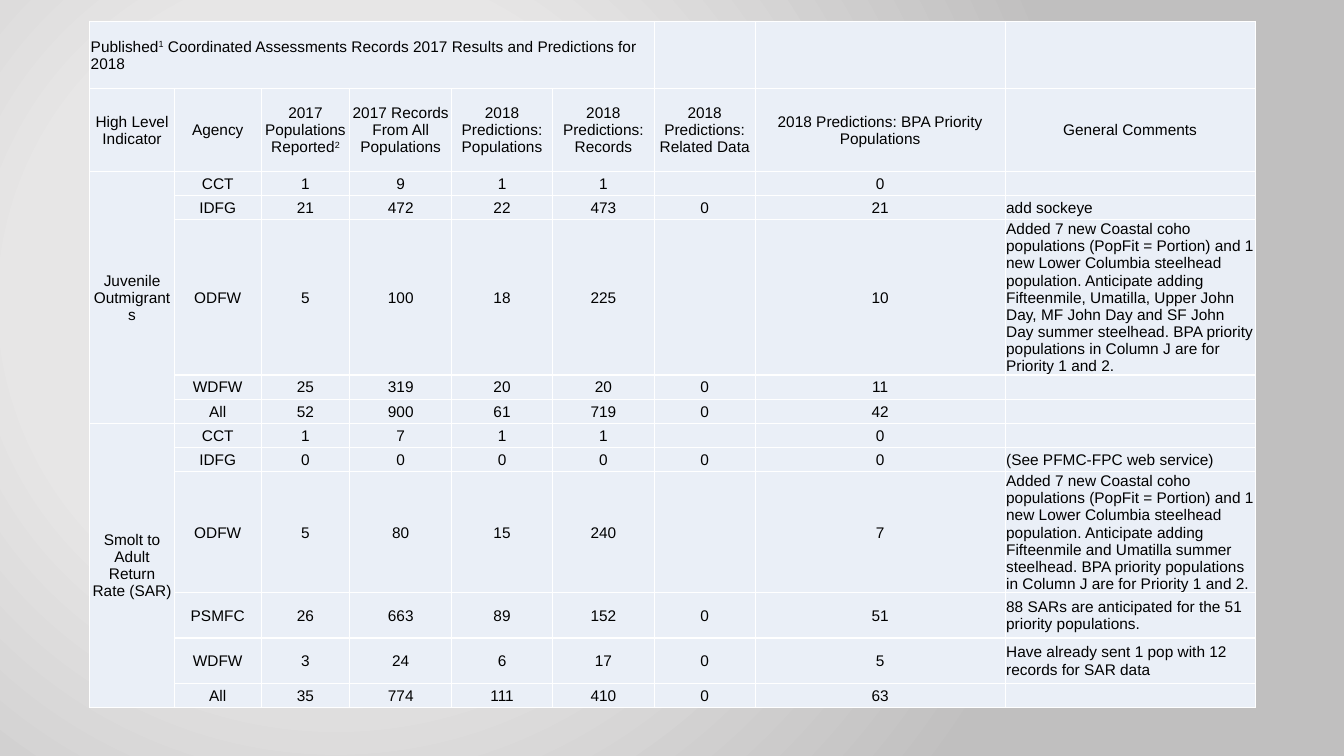
"""Build the slide with the table of 2017 results and 2018 predictions."""
from lxml.etree import SubElement
from pptx import Presentation
from pptx.dml.color import RGBColor
from pptx.enum.text import MSO_ANCHOR, PP_ALIGN
from pptx.oxml import parse_xml
from pptx.oxml.ns import nsdecls, qn
from pptx.util import Inches, Pt

TITLE = "Published^1^ Coordinated Assessments Records 2017 Results and Predictions for 2018"
HEADS = ["High Level Indicator", "Agency", "2017 Populations Reported^2^",
         "2017 Records From All Populations", "2018 Predictions: Populations",
         "2018 Predictions: Records", "2018 Predictions: Related Data",
         "2018 Predictions: BPA Priority Populations", "General Comments"]
COHO = ("Added 7 new Coastal coho populations (PopFit = Portion) and 1 new Lower Columbia "
        "steelhead population. Anticipate adding Fifteenmile{}summer steelhead. "
        "BPA priority populations in Column J are for Priority 1 and 2.")
GROUPS = [
    ("Juvenile Outmigrants", [
        ("CCT", 1, 9, 1, 1, "", 0, ""),
        ("IDFG", 21, 472, 22, 473, 0, 21, "add sockeye"),
        ("ODFW", 5, 100, 18, 225, "", 10,
         COHO.format(", Umatilla, Upper John Day, MF John Day and SF John Day ")),
        ("WDFW", 25, 319, 20, 20, 0, 11, ""),
        ("All", 52, 900, 61, 719, 0, 42, ""),
    ]),
    ("Smolt to Adult Return Rate (SAR)", [
        ("CCT", 1, 7, 1, 1, "", 0, ""),
        ("IDFG", 0, 0, 0, 0, 0, 0, "(See PFMC-FPC web service)"),
        ("ODFW", 5, 80, 15, 240, "", 7, COHO.format(" and Umatilla ")),
        ("PSMFC", 26, 663, 89, 152, 0, 51,
         "88 SARs are anticipated for the 51 priority populations."),
        ("WDFW", 3, 24, 6, 17, 0, 5, "Have already sent 1 pop with 12 records for SAR data"),
        ("All", 35, 774, 111, 410, 0, 63, ""),
    ]),
]
WIDTHS = [0.84, 0.86, 0.88, 1.01, 1, 1.01, 1, 2.48, 2.48]
HEIGHTS = [0.67, 0.82, 0.24, 0.24, 1.34, 0.24, 0.24, 0.24, 0.24, 1.12, 0.45, 0.45, 0.24]
SPAN = 6
THEME = {"font": "Arial", "size": 11, "text": "000000", "cell": "EAEFF7", "line": "FFFFFF",
         "back": [(0, "E8E7E7"), (41, "E7E6E6"), (100, "C0BFBF")]}


def paint(slide):
    """Fill the background with a round gradient."""
    stops = "".join(f'<a:gs pos="{pos * 1000}"><a:srgbClr val="{color}"/></a:gs>'
                    for pos, color in THEME["back"])
    back = parse_xml(
        f'<p:bg {nsdecls("p", "a")}><p:bgPr><a:gradFill><a:gsLst>{stops}</a:gsLst>'
        '<a:path path="circle"><a:fillToRect l="50000" t="80000" r="100000" b="100000"/>'
        '</a:path></a:gradFill><a:effectLst/></p:bgPr></p:bg>')
    slide.element.cSld.insert(0, back)


def frame(cell):
    """Draw the four borders of a cell."""
    props = cell._tc.get_or_add_tcPr()
    for spot, side in enumerate(("lnL", "lnR", "lnT", "lnB")):
        props.insert(spot, parse_xml(
            f'<a:{side} {nsdecls("a")} w="{Pt(1)}"><a:solidFill>'
            f'<a:srgbClr val="{THEME["line"]}"/></a:solidFill></a:{side}>'))


def write(cell, text, align):
    """Write text in a cell, raising the parts between carets."""
    para = cell.text_frame.paragraphs[0]
    para.alignment = align
    for spot, part in enumerate(str(text).split("^")):
        if part:
            run = para.add_run()
            run.text = part
            run.font.name = THEME["font"]
            run.font.size = Pt(THEME["size"])
            run.font.color.rgb = RGBColor.from_string(THEME["text"])
            if spot % 2:
                run.font._element.set("baseline", "30000")
    SubElement(para._p, qn("a:endParaRPr"), sz=str(THEME["size"] * 100))


def style(cell):
    """Set the fill, margins and borders of a cell."""
    cell.fill.solid()
    cell.fill.fore_color.rgb = RGBColor.from_string(THEME["cell"])
    cell.vertical_anchor = MSO_ANCHOR.MIDDLE
    cell.margin_left = cell.margin_right = cell.margin_top = Inches(0.01)
    cell.margin_bottom = 0
    frame(cell)


def main():
    """Build and save the slide."""
    deck = Presentation()
    deck.slide_width, deck.slide_height = Inches(13.33), Inches(7.5)
    slide = deck.slides.add_slide(deck.slide_layouts[6])
    paint(slide)
    lines = [[TITLE] + [""] * (len(HEADS) - 1), HEADS]
    spans = []
    for name, rows in GROUPS:
        spans.append((len(lines), len(lines) + len(rows) - 1))
        lines += [[name if row == 0 else "", *vals] for row, vals in enumerate(rows)]
    table = slide.shapes.add_table(
        len(lines), len(HEADS), Inches(0.89), Inches(0.21),
        Inches(sum(WIDTHS)), Inches(sum(HEIGHTS))).table
    table.first_row = table.horz_banding = False
    for col, width in zip(table.columns, WIDTHS):
        col.width = Inches(width)
    for row, height in zip(table.rows, HEIGHTS):
        row.height = Inches(height)
    last = len(HEADS) - 1
    for row, line in enumerate(lines):
        for col, text in enumerate(line):
            left = row == 0 or (row > 1 and col == last)
            cell = table.cell(row, col)
            write(cell, text, PP_ALIGN.LEFT if left else PP_ALIGN.CENTER)
            style(cell)
    table.cell(0, 0).merge(table.cell(0, SPAN - 1))
    for top, end in spans:
        table.cell(top, 0).merge(table.cell(end, 0))
    deck.save("out.pptx")


if __name__ == "__main__":
    main()
